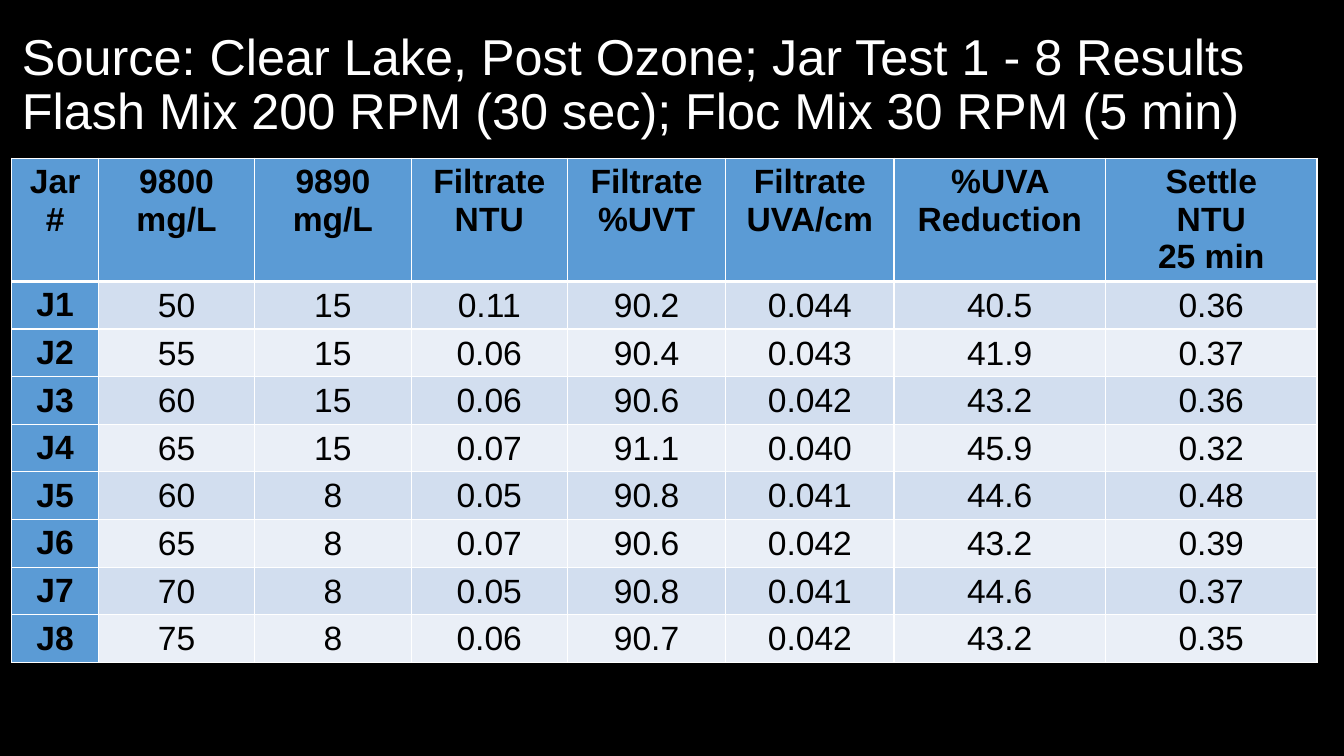
from lxml.etree import SubElement as Sub
from pptx import Presentation
from pptx.dml.color import RGBColor
from pptx.enum.text import MSO_ANCHOR as Anchor, MSO_AUTO_SIZE as Auto, PP_ALIGN as Align
from pptx.oxml.ns import qn
from pptx.util import Cm, Pt

TITLE = ["Source: Clear Lake, Post Ozone; Jar Test 1 - 8 Results",
         "Flash Mix 200 RPM (30 sec); Floc Mix 30 RPM (5 min)"]
HEADS = ["Jar#", "9800\nmg/L", "9890\nmg/L", "Filtrate\nNTU", "Filtrate\n%UVT",
         "Filtrate\nUVA/cm", "%UVA Reduction", "Settle\nNTU\n25 min"]
JARS = [
    ["J1", "50", "15", "0.11", "90.2", "0.044", "40.5", "0.36"],
    ["J2", "55", "15", "0.06", "90.4", "0.043", "41.9", "0.37"],
    ["J3", "60", "15", "0.06", "90.6", "0.042", "43.2", "0.36"],
    ["J4", "65", "15", "0.07", "91.1", "0.040", "45.9", "0.32"],
    ["J5", "60", "8", "0.05", "90.8", "0.041", "44.6", "0.48"],
    ["J6", "65", "8", "0.07", "90.6", "0.042", "43.2", "0.39"],
    ["J7", "70", "8", "0.05", "90.8", "0.041", "44.6", "0.37"],
    ["J8", "75", "8", "0.06", "90.7", "0.042", "43.2", "0.35"],
]
WIDTHS = [2.18, 3.94, 3.94, 3.94, 3.99, 4.24, 5.33, 5.33]
HEAD_H, ROW_H = 3.1, 1.2
BLUE, BANDS = "5B9BD5", ["D2DEEF", "EAEFF7"]


def color(code):
    return RGBColor.from_string(code)


def paint(fill, code):
    fill.solid()
    fill.fore_color.rgb = color(code)


def style(par, size, code, bold, align):
    par.alignment = align
    par.font.name = "Arial"
    par.font.size = Pt(size)
    par.font.bold = bold
    par.font.color.rgb = color(code)


def edge(cell, side, width):
    line = Sub(cell._tc.get_or_add_tcPr(), qn("a:ln" + side), w=str(Pt(width)))
    Sub(Sub(line, qn("a:solidFill")), qn("a:srgbClr"), val="FFFFFF")


def add_title(slide, left, top, width, height):
    title = slide.shapes.title
    title.left, title.top = Cm(left), Cm(top)
    title.width, title.height = Cm(width), Cm(height)
    frame = title.text_frame
    frame.word_wrap = True
    frame.auto_size = Auto.NONE
    frame.vertical_anchor = Anchor.MIDDLE
    par = frame.paragraphs[0]
    par.add_run().text = TITLE[0]
    par.add_line_break()
    par.add_run().text = TITLE[1]
    par.line_spacing = 0.9
    par.space_before = Pt(0)
    style(par, 36, "FFFFFF", False, Align.LEFT)


def fill_cell(cell, text, row, col):
    label = row == 0 or col == 0
    for side, width in zip("LRTB", [1, 1, 3 if row == 1 else 1, 3 if row == 0 else 1]):
        edge(cell, side, width)
    paint(cell.fill, BLUE if label else BANDS[(row - 1) % 2])
    if not label:
        cell.vertical_anchor = Anchor.MIDDLE
        cell.margin_left = cell.margin_right = cell.margin_top = Cm(0.03)
        cell.margin_bottom = 0
    cell.text = text
    for par in cell.text_frame.paragraphs:
        style(par, 24, "000000", label, Align.CENTER)


def add_results(slide, left, top):
    rows = [HEADS] + JARS
    height = HEAD_H + ROW_H * len(JARS)
    table = slide.shapes.add_table(len(rows), len(HEADS), Cm(left), Cm(top),
                                   Cm(sum(WIDTHS)), Cm(height)).table
    table.first_row = table.horz_banding = False
    for column, width in zip(table.columns, WIDTHS):
        column.width = Cm(width)
    for r, texts in enumerate(rows):
        table.rows[r].height = Cm(ROW_H if r else HEAD_H)
        for c, text in enumerate(texts):
            fill_cell(table.cell(r, c), text, r, c)


def main():
    deck = Presentation()
    deck.slide_width, deck.slide_height = Cm(33.87), Cm(19.05)
    slide = deck.slides.add_slide(deck.slide_layouts[5])
    paint(slide.background.fill, "000000")
    add_title(slide, 0.3, 0.33, 33.1, 3.68)
    add_results(slide, 0.3, 3.99)
    deck.save("out.pptx")


if __name__ == "__main__":
    main()
